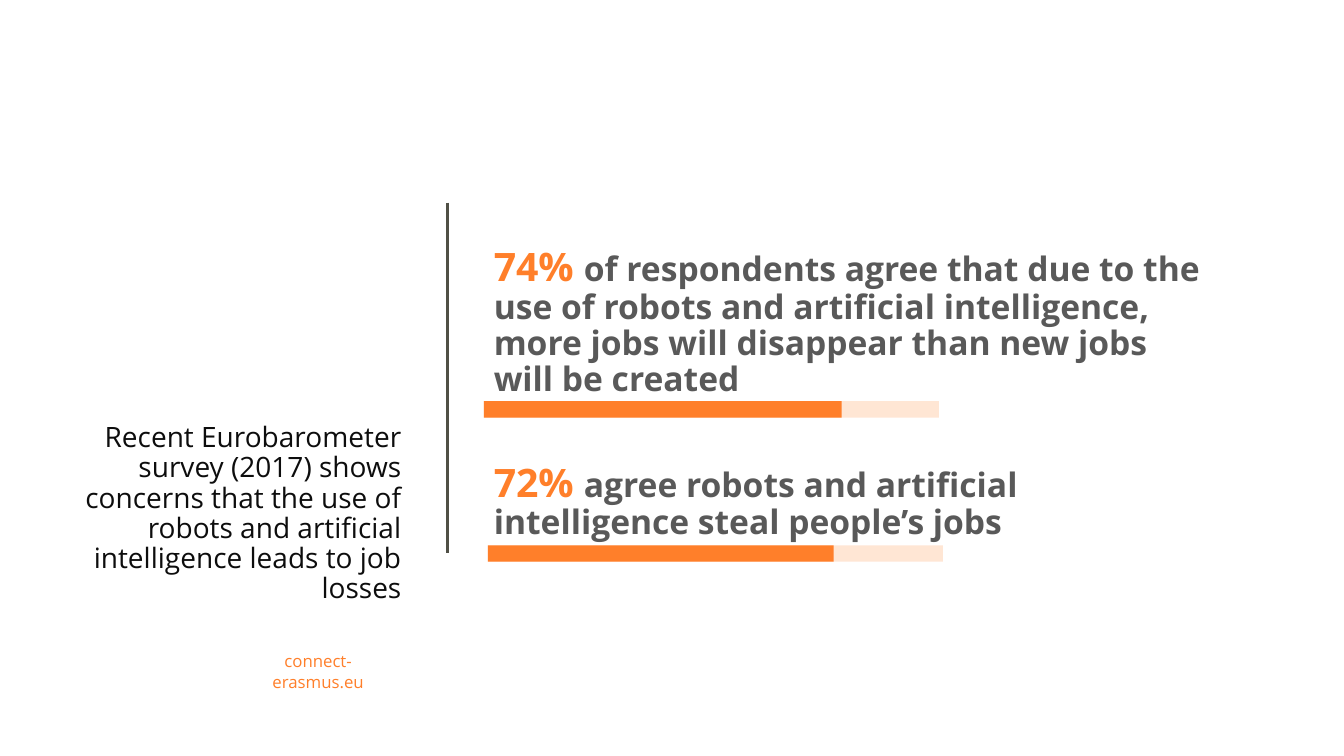
import pptx
import pptx.dml.color
import pptx.enum.shapes
import pptx.enum.text
import pptx.oxml.ns
import pptx.util
from lxml import etree

Pt = pptx.util.Pt
ALIGN = pptx.enum.text.PP_ALIGN
ANCHOR = pptx.enum.text.MSO_ANCHOR
COLORS = {"accent": "FF7F2A", "track": "FFE6D4", "dark": "0D0D0D",
          "gray": "595959", "rule": "505046"}


def rgb(name):
    return pptx.dml.color.RGBColor.from_string(COLORS[name])


class SurveySlide:
    font_name = "Open Sans"

    def __init__(self, deck):
        self.page = deck.slides.add_slide(deck.slide_layouts[6])

    def text(self, left, top, width, height, paras, anchor, **para_format):
        """Each paragraph is a list of (text, size, color, bold) spans."""
        box = self.page.shapes.add_textbox(Pt(left), Pt(top), Pt(width), Pt(height))
        frame = box.text_frame
        frame.word_wrap = True
        frame.vertical_anchor = anchor
        for index, spans in enumerate(paras):
            para = frame.add_paragraph() if index else frame.paragraphs[0]
            for key, value in para_format.items():
                if index or key != "space_before":
                    setattr(para, key, value)
            for words, size, color, bold in spans:
                span = para.add_run()
                span.text = words
                font_format = {"name": self.font_name, "size": Pt(size), "bold": bold}
                for key, value in font_format.items():
                    setattr(span.font, key, value)
                span.font.color.rgb = rgb(color)

    def rule(self, left, top, bottom):
        line = self.page.shapes.add_connector(
            pptx.enum.shapes.MSO_CONNECTOR.STRAIGHT, Pt(left), Pt(top), Pt(left), Pt(bottom))
        line.line.color.rgb = rgb("rule")
        line.line.width = Pt(2)
        etree.SubElement(line._element.spPr, pptx.oxml.ns.qn("a:effectLst"))

    def bar(self, left, top, width, color):
        shape = self.page.shapes.add_shape(
            pptx.enum.shapes.MSO_SHAPE.RECTANGLE, Pt(left), Pt(top), Pt(width), Pt(11.8))
        shape.shadow.inherit = False
        shape.fill.solid()
        shape.fill.fore_color.rgb = rgb(color)
        shape.line.fill.background()

    def progress(self, left, top, filled):
        self.bar(left, top, 325, "track")
        self.bar(left, top, filled, "accent")


def main():
    deck = pptx.Presentation()
    deck.slide_width, deck.slide_height = Pt(960), Pt(540)
    slide = SurveySlide(deck)

    slide.text(164, 468.5, 126.5, 22, [[("connect-erasmus.eu", 12, "accent", False)]],
               ANCHOR.MIDDLE, alignment=ALIGN.CENTER)
    slide.text(50.4, 104.4, 243.4, 331.2,
               [[("Recent Eurobarometer survey (2017) shows concerns that the use of "
                  "robots and artificial intelligence leads to job losses",
                  20, "dark", False)]],
               ANCHOR.BOTTOM, alignment=ALIGN.RIGHT, line_spacing=0.9)
    slide.rule(319.7, 144.7, 395.3)

    findings = [
        ("74% ", "of respondents agree that due to the use of robots and artificial "
                 "intelligence, more jobs will disappear than new jobs will be created"),
        ("72% ", "agree robots and artificial intelligence steal people’s jobs"),
    ]
    slide.text(345.6, 173.6, 519.8, 240,
               [[(share, 28, "accent", True), (claim, 24, "gray", True)]
                for share, claim in findings],
               ANCHOR.TOP, line_spacing=0.9, space_before=Pt(46))
    slide.progress(348.5, 389.5, 247)
    slide.progress(345.6, 286.6, 255.6)
    deck.save("out.pptx")


if __name__ == "__main__":
    main()
